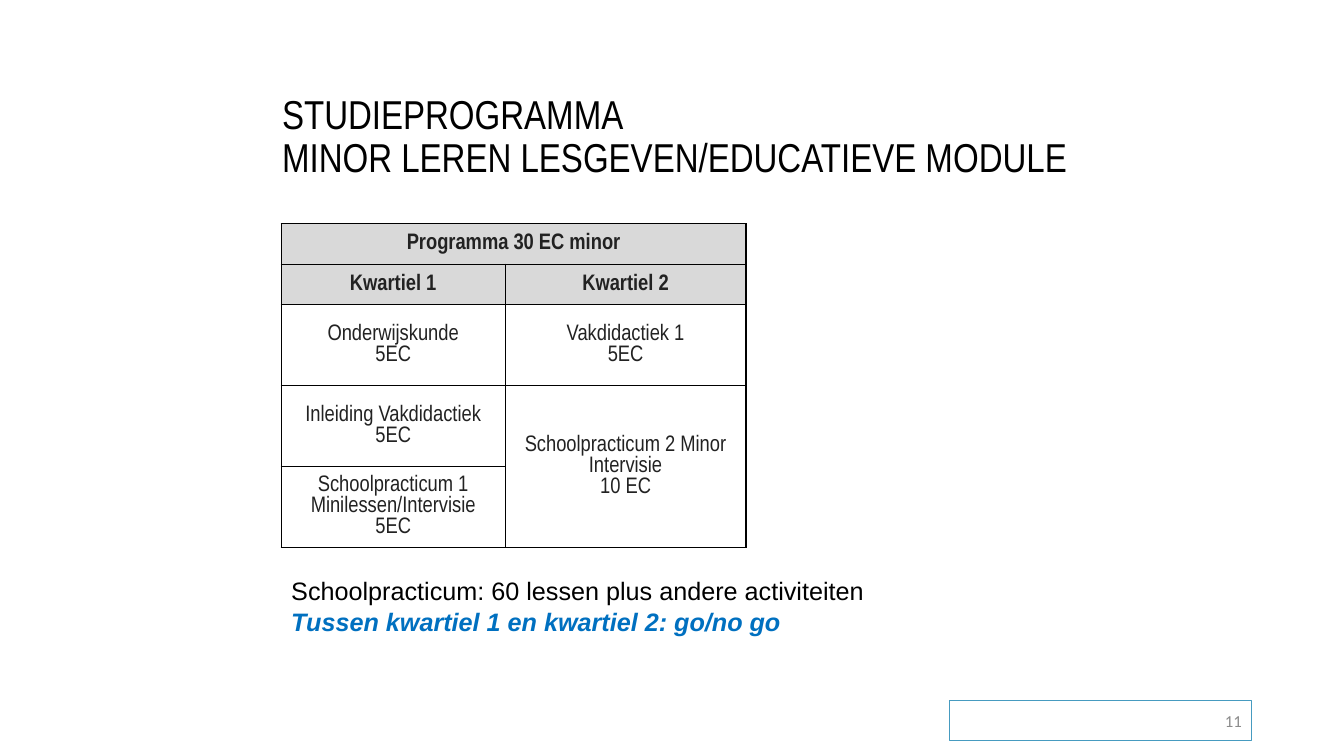
from lxml import etree
from pptx import Presentation
from pptx.dml.color import RGBColor
from pptx.enum import shapes, text
from pptx.oxml import ns
from pptx.util import Cm, Pt

BLACK = RGBColor(0x00, 0x00, 0x00)
INK = RGBColor(0x22, 0x22, 0x22)
GREY = RGBColor(0x8C, 0x8C, 0x8C)
HEADER_FILL = RGBColor(0xD9, 0xD9, 0xD9)
WHITE = RGBColor(0xFF, 0xFF, 0xFF)
BLUE = RGBColor(0x00, 0x70, 0xC0)
TEAL = RGBColor(0x46, 0x9B, 0xC0)

TITLE = "STUDIEPROGRAMMA\vMINOR LEREN LESGEVEN/EDUCATIEVE MODULE"
NOTES = [
    ("Schoolpracticum: 60 lessen plus andere activiteiten", BLACK, False),
    ("Tussen kwartiel 1 en kwartiel 2: go/no go", BLUE, True),
]
PAGE_NUMBER = "11"
PROGRAMME = [
    ["Programma 30 EC minor", ""],
    ["Kwartiel 1", "Kwartiel 2"],
    ["Onderwijskunde\n5EC", "Vakdidactiek 1\n5EC"],
    ["Inleiding Vakdidactiek\n5EC", "Schoolpracticum 2 Minor\nIntervisie\n10 EC"],
    ["Schoolpracticum 1\nMinilessen/Intervisie\n5EC", ""],
]
MERGES = [((0, 0), (0, 1)), ((3, 1), (4, 1))]
HEADER_ROWS = 2
COLUMN_WIDTHS = [5.64, 6.07]
ROW_HEIGHTS = [1.02, 1.02, 2.04, 2.04, 2.04]


def style(para, name, size, color, bold=False, italic=False):
    font = para.font
    font.name, font.size = name, Pt(size)
    font.color.rgb = color
    font.bold, font.italic = bold, italic


def add_borders(cell):
    properties = cell._tc.get_or_add_tcPr()
    for side in ("a:lnL", "a:lnR", "a:lnT", "a:lnB"):
        line = etree.SubElement(properties, ns.qn(side), w=str(Pt(1)))
        fill = etree.SubElement(line, ns.qn("a:solidFill"))
        etree.SubElement(fill, ns.qn("a:srgbClr"), val=str(BLACK))


def add_title(page):
    box = page.shapes.add_textbox(Cm(6.86), Cm(1.02), Cm(25.88), Cm(3.68))
    frame = box.text_frame
    frame.word_wrap = True
    frame.vertical_anchor = text.MSO_ANCHOR.BOTTOM
    para = frame.paragraphs[0]
    para.text = TITLE
    para.line_spacing = 0.9
    style(para, "Arial Narrow", 28.8, BLACK)


def add_programme(page):
    table = page.shapes.add_table(
        len(ROW_HEIGHTS), len(COLUMN_WIDTHS), Cm(7.09), Cm(5.64),
        Cm(sum(COLUMN_WIDTHS)), Cm(sum(ROW_HEIGHTS))).table
    table.first_row = table.horz_banding = False
    for column, width in zip(table.columns, COLUMN_WIDTHS):
        column.width = Cm(width)
    for r, (row, height) in enumerate(zip(table.rows, ROW_HEIGHTS)):
        row.height = Cm(height)
        header = r < HEADER_ROWS
        for cell, words in zip(row.cells, PROGRAMME[r]):
            add_borders(cell)
            cell.fill.solid()
            cell.fill.fore_color.rgb = HEADER_FILL if header else WHITE
            cell.margin_left = cell.margin_right = Cm(0.1)
            cell.margin_top = cell.margin_bottom = Cm(0.08 if header else 0)
            cell.vertical_anchor = text.MSO_ANCHOR.MIDDLE
            cell.text = words
            for para in cell.text_frame.paragraphs:
                para.alignment = text.PP_ALIGN.CENTER
                para.line_spacing = Pt(15)
                style(para, "Arial Narrow", 16, INK, header)
    for first, last in MERGES:
        table.cell(*first).merge(table.cell(*last))


def add_notes(page):
    box = page.shapes.add_textbox(Cm(7.09), Cm(14.38), Cm(19.53), Cm(1.8))
    frame = box.text_frame
    frame.word_wrap = True
    frame.text = "\n".join(words for words, _, _ in NOTES)
    for para, (_, color, strong) in zip(frame.paragraphs, NOTES):
        style(para, "Arial", 18, color, strong, strong)


def add_page_number(page):
    box = page.shapes.add_shape(
        shapes.MSO_SHAPE.RECTANGLE, Cm(23.93), Cm(17.65), Cm(7.62), Cm(1.02))
    box.shadow.inherit = False
    box.fill.background()
    box.line.color.rgb = TEAL
    box.line.width = Pt(0.75)
    frame = box.text_frame
    frame.vertical_anchor = text.MSO_ANCHOR.MIDDLE
    para = frame.paragraphs[0]
    para.text = PAGE_NUMBER
    para.alignment = text.PP_ALIGN.RIGHT
    style(para, "Calibri", 12, GREY)


def main():
    deck = Presentation()
    deck.slide_width, deck.slide_height = Cm(33.87), Cm(19.05)
    page = deck.slides.add_slide(deck.slide_layouts[6])
    add_title(page)
    add_page_number(page)
    add_notes(page)
    add_programme(page)
    deck.save("out.pptx")


if __name__ == "__main__":
    main()
